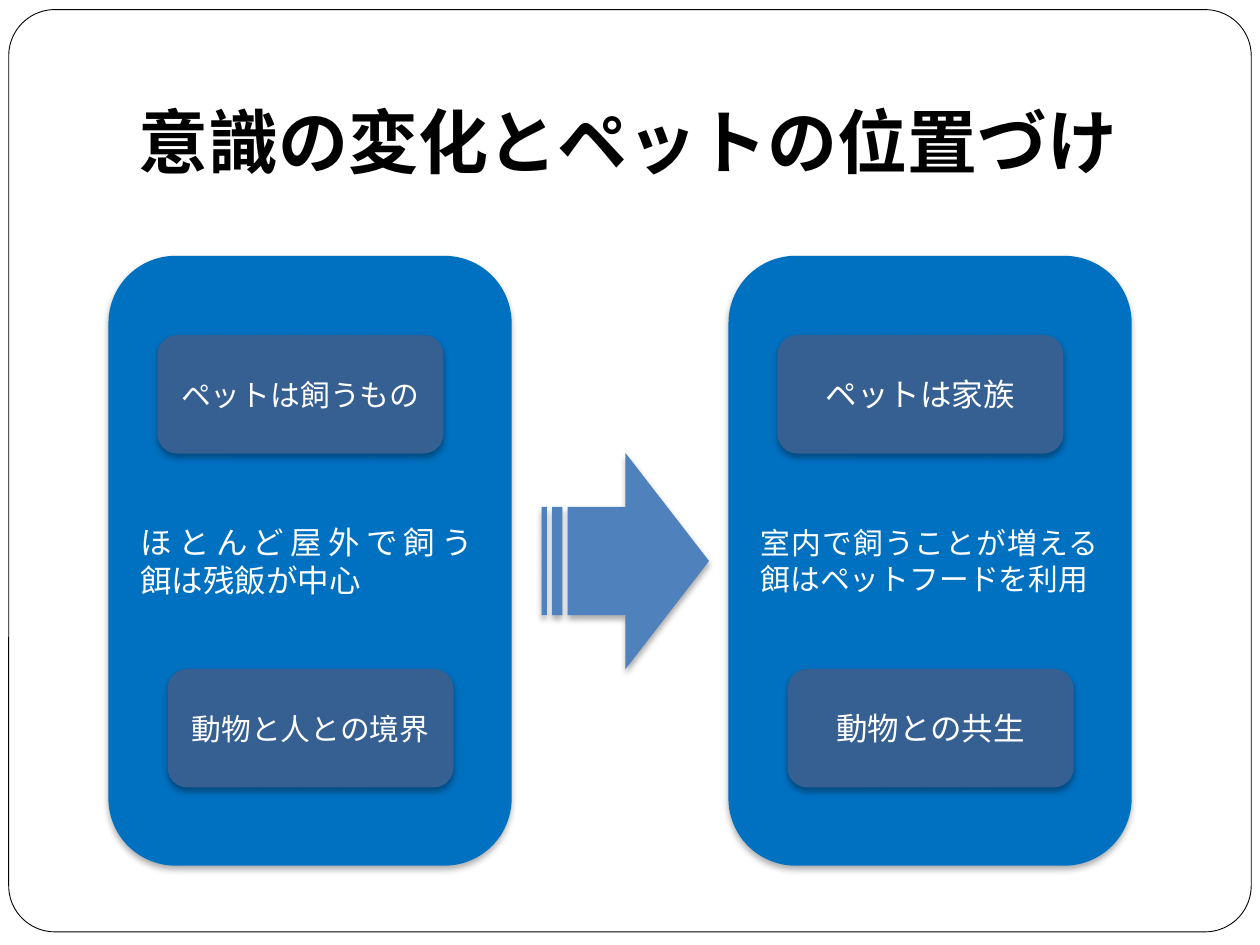
from lxml.etree import SubElement
from pptx import Presentation
from pptx.dml.color import RGBColor
from pptx.enum.shapes import MSO_SHAPE
from pptx.enum.text import MSO_ANCHOR, PP_ALIGN
from pptx.oxml.ns import qn
from pptx.util import Pt

TITLE = "意識の変化とペットの位置づけ"
PANELS = [
    {"body": ("ほとんど屋外で飼う\n餌は残飯が中心", 18),
     "cards": ["ペットは飼うもの", "動物と人との境界"], "size": 17},
    {"body": ("室内で飼うことが増える\n餌はペットフードを利用", 17),
     "cards": ["ペットは家族", "動物との共生"], "size": 18},
]
THEME = {
    "font": "Calibri", "title": 40,
    "ink": "000000", "paper": "FFFFFF",
    "panel": "0070C0", "card": "376092", "arrow": "4F81BD",
}

# Lengths in points
LEFT, TOP, STEP = 62, 146.2, 354.3
PANEL = (230.4, 348.5)
CARD = (163.4, 67.7)
SPOTS = [(28, 45.3), (33.8, 236.1)]  # card offsets inside a panel


def color(key):
    return RGBColor.from_string(THEME[key])


def write(shape, text, size, ink="paper", bold=False,
          align=PP_ALIGN.CENTER, anchor=MSO_ANCHOR.MIDDLE):
    frame = shape.text_frame
    frame.word_wrap = True
    frame.vertical_anchor = anchor
    para = frame.paragraphs[0]
    para.text = text
    para.alignment = align
    for run in para.runs:
        font = run.font
        font.name, font.size, font.bold = THEME["font"], Pt(size), bold
        font.color.rgb = color(ink)
    return frame


def shade(shape):
    """Give the shape a soft shadow straight below it."""
    effects = shape._element.spPr.find(qn("a:effectLst"))
    outer = SubElement(effects, qn("a:outerShdw"), blurRad=str(Pt(3.5)),
                       dist=str(Pt(2.2)), dir="5400000", rotWithShape="0")
    tint = SubElement(outer, qn("a:srgbClr"), val=THEME["ink"])
    SubElement(tint, qn("a:alpha"), val="32000")


def draw(slide, kind, box, fill, line=None):
    """Add a filled shape: outlined if line is given, else shadowed."""
    shape = slide.shapes.add_shape(kind, *map(Pt, box))
    shape.shadow.inherit = False
    shape.fill.solid()
    shape.fill.fore_color.rgb = color(fill)
    if line:
        shape.line.color.rgb = color(line)
        shape.line.width = Pt(0.5)
    else:
        shape.line.fill.background()
        shade(shape)
    return shape


def main():
    deck = Presentation()
    deck.slide_width, deck.slide_height = Pt(720), Pt(540)
    slide = deck.slides.add_slide(deck.slide_layouts[6])
    rounded = MSO_SHAPE.ROUNDED_RECTANGLE

    border = draw(slide, rounded, (5, 5.5, 710, 527), "paper", line="ink")
    border.adjustments[0] = 0.05

    title = slide.shapes.add_textbox(Pt(72), Pt(21.6), Pt(612), Pt(90))
    frame = write(title, TITLE, THEME["title"], ink="ink", bold=True,
                  align=PP_ALIGN.LEFT, anchor=MSO_ANCHOR.BOTTOM)
    frame.margin_bottom = Pt(7.2)

    for i, panel in enumerate(PANELS):
        x = LEFT + i * STEP
        base = draw(slide, rounded, (x, TOP, *PANEL), "panel")
        write(base, *panel["body"], align=PP_ALIGN.JUSTIFY)
        for text, (dx, dy) in zip(panel["cards"], SPOTS):
            card = draw(slide, rounded, (x + dx, TOP + dy, *CARD), "card")
            write(card, text, panel["size"])

    draw(slide, MSO_SHAPE.STRIPED_RIGHT_ARROW,
         (309.5, 258.7, 95.7, 123.8), "arrow")
    deck.save("out.pptx")


if __name__ == "__main__":
    main()
